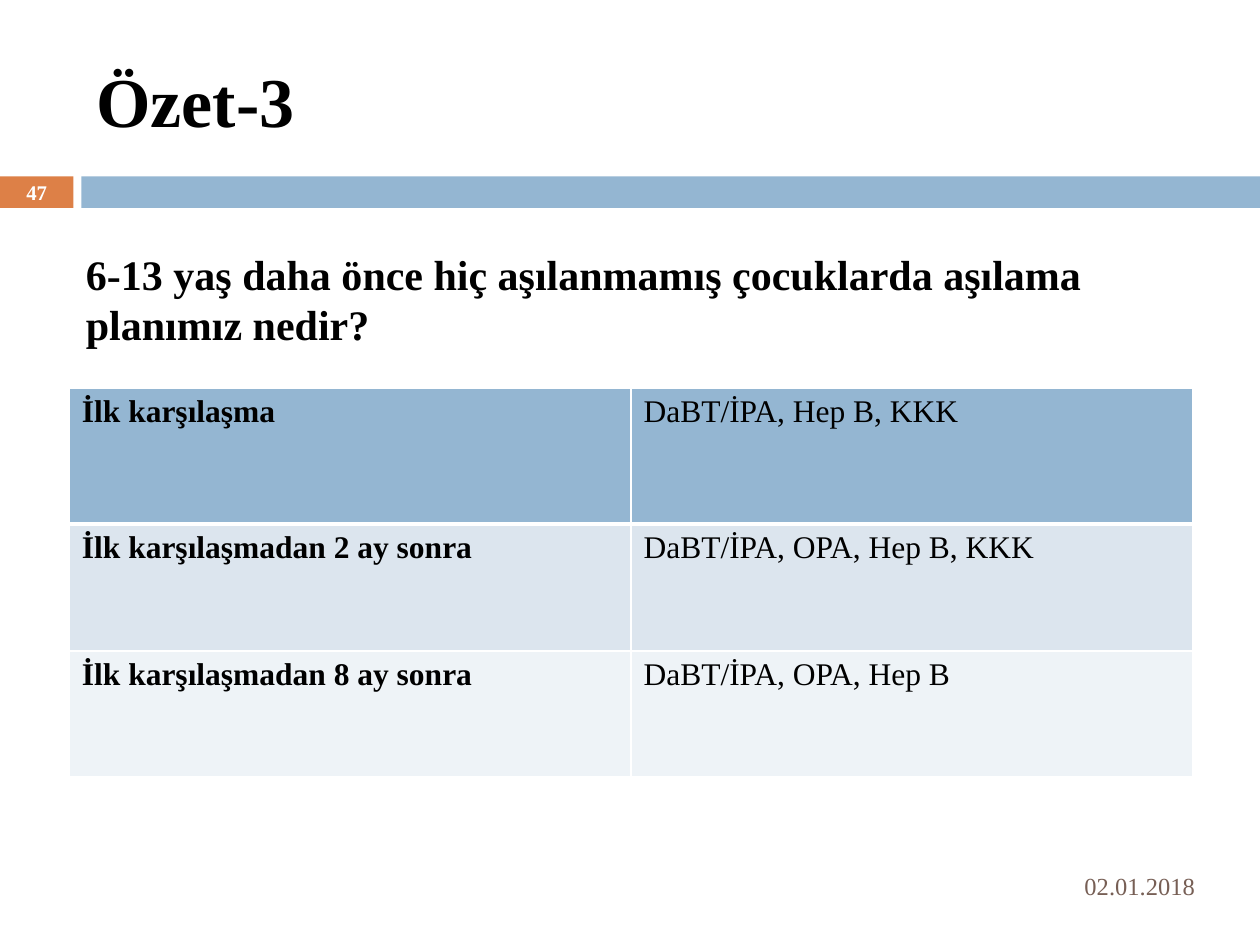
from dataclasses import dataclass

from lxml import etree
from pptx import Presentation
from pptx.dml.color import RGBColor
from pptx.enum.shapes import MSO_SHAPE
from pptx.enum.text import MSO_ANCHOR, PP_ALIGN
from pptx.oxml.ns import qn
from pptx.util import Pt

RECTANGLE = MSO_SHAPE.RECTANGLE
TOP, MIDDLE = MSO_ANCHOR.TOP, MSO_ANCHOR.MIDDLE
LEFT, CENTER, RIGHT = PP_ALIGN.LEFT, PP_ALIGN.CENTER, PP_ALIGN.RIGHT


@dataclass(frozen=True)
class Theme:
    """Colours, font and type sizes of the slide."""
    font: str = "Times New Roman"
    ink: str = "000000"
    white: str = "FFFFFF"
    orange: str = "DD8047"
    blue: str = "94B6D2"
    brown: str = "775F55"
    row_fills: tuple = ("94B6D2", "DCE5EE", "EEF3F7")
    title: float = 40
    question: float = 24
    cell: float = 18
    date: float = 14
    number: float = 11.9
    rule: float = 1
    header_rule: float = 3


THEME = Theme()

SCHEDULE = (
    ("İlk karşılaşma", "DaBT/İPA, Hep B, KKK"),
    ("İlk karşılaşmadan 2 ay sonra", "DaBT/İPA, OPA, Hep B, KKK"),
    ("İlk karşılaşmadan 8 ay sonra", "DaBT/İPA, OPA, Hep B"),
)


def add_run(paragraph, text, size, color, bold):
    """Add one formatted run to a paragraph."""
    run = paragraph.add_run()
    run.text = text
    run.font.name = THEME.font
    run.font.size = Pt(size)
    run.font.bold = bold
    run.font.color.rgb = RGBColor.from_string(color)


def add_label(slide, box, text, size, color, bold=True, align=LEFT, anchor=MIDDLE):
    """Add a wrapping one-paragraph text box."""
    frame = slide.shapes.add_textbox(*map(Pt, box)).text_frame
    frame.word_wrap = True
    frame.vertical_anchor = anchor
    paragraph = frame.paragraphs[0]
    paragraph.alignment = align
    add_run(paragraph, text, size, color, bold)


def add_bar(slide, box, color):
    """Add a plain filled rectangle."""
    bar = slide.shapes.add_shape(RECTANGLE, *map(Pt, box))
    bar.shadow.inherit = False
    bar.fill.solid()
    bar.fill.fore_color.rgb = RGBColor.from_string(color)
    bar.line.fill.background()


def add_number_band(slide, box, number):
    """Place the slide number block and the long bar beside it."""
    left, top, width, height = box
    number_width, bar_offset = 42, 46.5
    add_bar(slide, (left, top, number_width, height), THEME.orange)
    add_bar(slide, (left + bar_offset, top, width - bar_offset, height), THEME.blue)
    add_label(slide, (left, top, number_width, height), number,
              THEME.number, THEME.white, align=CENTER)


def set_border(cell, side, width):
    """Draw one white cell border."""
    line = etree.SubElement(cell._tc.get_or_add_tcPr(), qn(f"a:ln{side}"), w=str(Pt(width)))
    fill = etree.SubElement(line, qn("a:solidFill"))
    etree.SubElement(fill, qn("a:srgbClr"), val=THEME.white)


def add_schedule(slide, box, row_heights):
    """Place the vaccination schedule table."""
    table = slide.shapes.add_table(len(SCHEDULE), 2, *map(Pt, box)).table
    for column in table.columns:
        column.width = Pt(box[2] / 2)
    for row_index, (visit, vaccines) in enumerate(SCHEDULE):
        table.rows[row_index].height = Pt(row_heights[row_index])
        top_rule = THEME.header_rule if row_index == 1 else THEME.rule
        bottom_rule = THEME.header_rule if row_index == 0 else THEME.rule
        rules = {"L": THEME.rule, "R": THEME.rule, "T": top_rule, "B": bottom_rule}
        for column_index, text in enumerate((visit, vaccines)):
            cell = table.cell(row_index, column_index)
            for side, width in rules.items():
                set_border(cell, side, width)
            cell.fill.solid()
            cell.fill.fore_color.rgb = RGBColor.from_string(THEME.row_fills[row_index])
            add_run(cell.text_frame.paragraphs[0], text, THEME.cell, THEME.ink,
                    bold=column_index == 0)


def main():
    """Build and save the slide."""
    presentation = Presentation()
    presentation.slide_width, presentation.slide_height = Pt(720), Pt(540)
    slide = presentation.slides.add_slide(presentation.slide_layouts[6])
    add_number_band(slide, (0, 100.8, 720, 18), "47")
    add_label(slide, (48, 18, 642, 78), "Özet-3", THEME.title, THEME.ink)
    add_label(slide, (480, 492, 210, 28.8), "02.01.2018", THEME.date, THEME.brown,
              bold=False, align=RIGHT)
    add_schedule(slide, (39.6, 222, 642, 222), (77.5, 72.5, 72))
    add_label(slide, (42, 138.24, 618, 65.5),
              "6-13 yaş daha önce hiç aşılanmamış çocuklarda aşılama planımız nedir?",
              THEME.question, THEME.ink, anchor=TOP)
    presentation.save("out.pptx")


if __name__ == "__main__":
    main()
